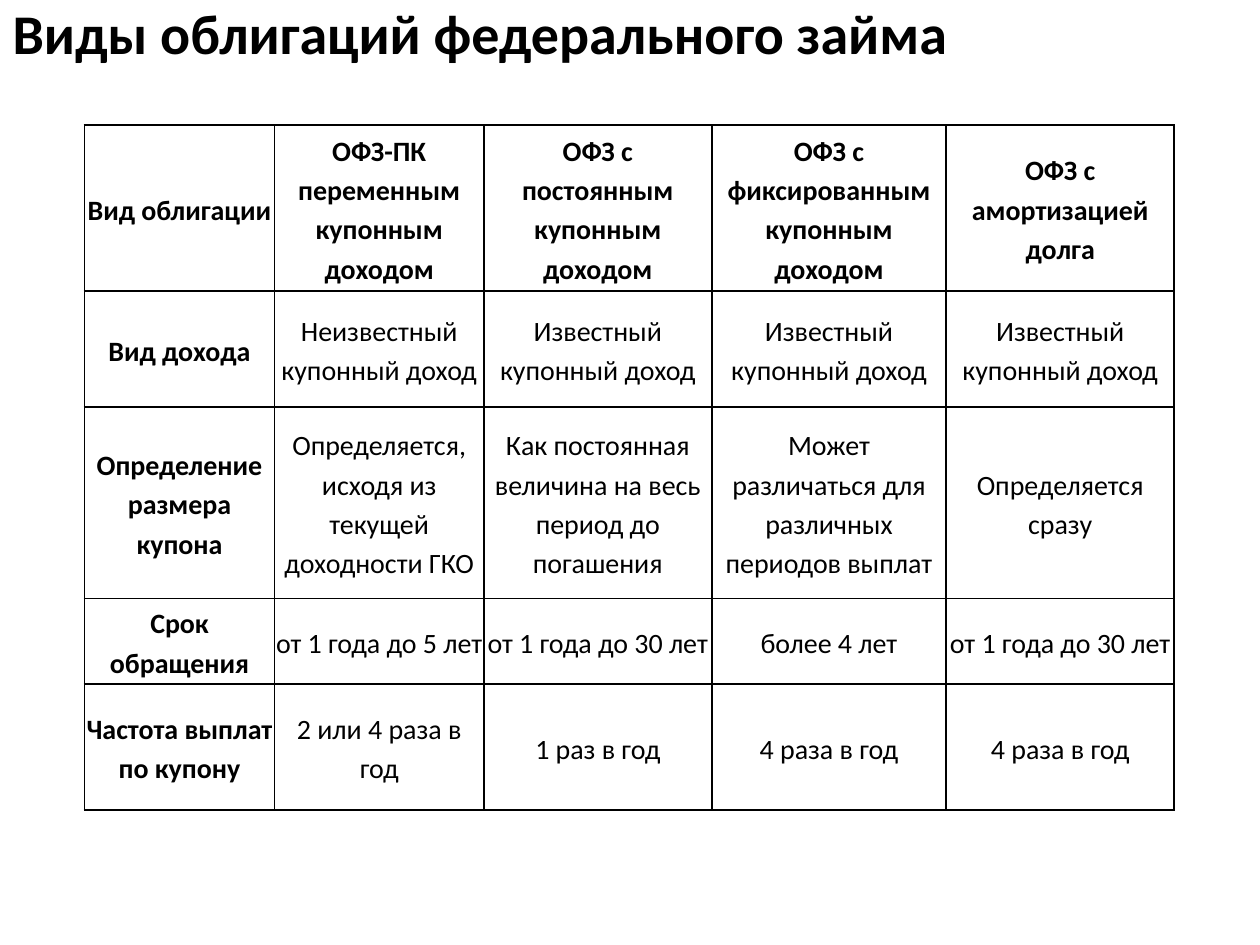
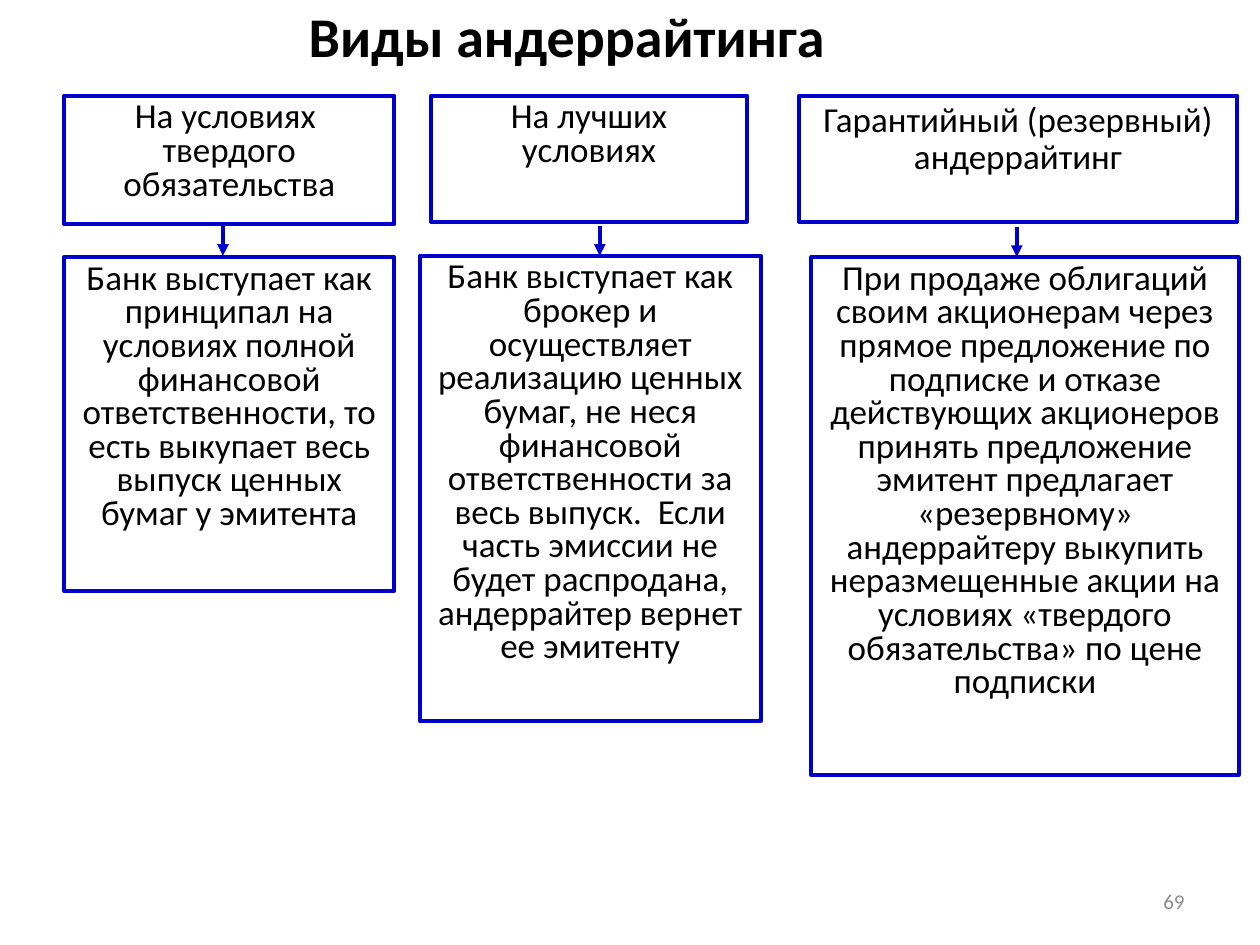
from lxml import etree
from pptx import Presentation
from pptx.dml.color import RGBColor
from pptx.enum.shapes import MSO_CONNECTOR as Connector, MSO_SHAPE as Shape
from pptx.enum.text import MSO_ANCHOR as Anchor, MSO_AUTO_SIZE as AutoSize, PP_ALIGN as Align
from pptx.oxml.ns import qn
from pptx.util import Inches, Pt

FONT = "Calibri"
BLACK, WHITE, BLUE, GREY = "000000", "FFFFFF", "0000CC", "8C8C8C"

BONDS_TITLE = "Виды облигаций федерального займа"
BOND_ROWS = [
    ["Вид облигации", "ОФЗ-ПК переменным купонным доходом", "ОФЗ с постоянным купонным доходом",
     "ОФЗ с фиксированным купонным доходом", "ОФЗ с амортизацией долга"],
    ["Вид дохода", "Неизвестный купонный доход", "Известный купонный доход",
     "Известный купонный доход", "Известный купонный доход"],
    ["Определение размера купона", "Определяется, исходя из текущей доходности ГКО",
     "Как постоянная величина на весь период до погашения",
     "Может различаться для различных периодов выплат", "Определяется сразу"],
    ["Срок обращения", "от 1 года до 5 лет", "от 1 года до 30 лет", "более 4 лет",
     "от 1 года до 30 лет"],
    ["Частота выплат по купону", "2 или 4 раза в год", "1 раз в год", "4 раза в год",
     "4 раза в год"],
]
COLUMN_WIDTHS = [1.51, 1.66, 1.81, 1.86, 1.81]
ROW_HEIGHTS = [1.32, 0.92, 1.52, 0.68, 1]

UNDERWRITING_TITLE = "Виды андеррайтинга"
PAGE_NUMBER = "69"
UNDERWRITING = [
    dict(kind="На условиях  твердого обязательства", kind_box=(0.51, 0.76, 2.62, 1.02),
         kind_spacing=0.8, arrow=(1.77, 1.79),
         terms="Банк выступает как принципал на условиях полной финансовой ответственности, "
               "то есть выкупает весь выпуск ценных бумаг у эмитента",
         terms_box=(0.51, 2.04, 2.62, 2.65)),
    dict(kind="На лучших условиях", kind_box=(3.42, 0.76, 2.51, 1),
         kind_spacing=0.8, arrow=(4.76, 1.79),
         terms="Банк выступает как брокер и осуществляет реализацию ценных бумаг, не неся "
               "финансовой ответственности за весь выпуск.  Если часть эмиссии не будет "
               "распродана, андеррайтер вернет ее эмитенту",
         terms_box=(3.33, 2.03, 2.71, 3.69)),
    dict(kind="Гарантийный (резервный) андеррайтинг", kind_box=(6.34, 0.76, 3.48, 1),
         kind_spacing=0.9, arrow=(8.07, 1.8),
         terms="При продаже облигаций своим акционерам через прямое предложение по подписке "
               "и отказе действующих акционеров принять предложение эмитент предлагает "
               "«резервному» андеррайтеру выкупить неразмещенные акции на условиях "
               "«твердого обязательства» по цене подписки",
         terms_box=(6.44, 2.04, 3.39, 4.11)),
]
ARROW_LENGTH = 0.24


def color(code):
    return RGBColor.from_string(code)


def write(frame, text, size=20, ink=BLACK, bold=False, align=Align.CENTER, spacing=1.0,
          before=0, after=0, anchor=Anchor.TOP):
    frame.word_wrap = True
    frame.vertical_anchor = anchor
    paragraph = frame.paragraphs[0]
    paragraph.alignment = align
    paragraph.line_spacing = spacing
    paragraph.space_before, paragraph.space_after = Pt(before), Pt(after)
    run = paragraph.add_run()
    run.text = text
    run.font.name, run.font.size, run.font.bold = FONT, Pt(size), bold
    run.font.color.rgb = color(ink)


def add_titled_slide(deck, text, box, align):
    slide = deck.slides.add_slide(deck.slide_layouts[5])
    title = slide.shapes.title
    title.left, title.top, title.width, title.height = map(Inches, box)
    title.text_frame.auto_size = AutoSize.NONE
    write(title.text_frame, text, size=32, bold=True, align=align, spacing=0.9, after=6)
    return slide


def add_borders(cell):
    properties = cell._tc.get_or_add_tcPr()
    for position, side in enumerate(("lnL", "lnR", "lnT", "lnB")):
        border = etree.Element(qn(f"a:{side}"), w=str(Pt(1)))
        fill = etree.SubElement(border, qn("a:solidFill"))
        etree.SubElement(fill, qn("a:srgbClr"), val=BLACK)
        properties.insert(position, border)


def add_bond_table(slide):
    table = slide.shapes.add_table(
        len(BOND_ROWS), len(COLUMN_WIDTHS), Inches(0.67), Inches(0.99),
        Inches(sum(COLUMN_WIDTHS)), Inches(sum(ROW_HEIGHTS))).table
    table.first_row = table.horz_banding = False
    for column, width in zip(table.columns, COLUMN_WIDTHS):
        column.width = Inches(width)
    for row, height in zip(table.rows, ROW_HEIGHTS):
        row.height = Inches(height)
    for r, texts in enumerate(BOND_ROWS):
        for c, text in enumerate(texts):
            cell = table.cell(r, c)
            cell.margin_left = cell.margin_right = Inches(0.01)
            cell.margin_top = cell.margin_bottom = Inches(0.01)
            cell.fill.solid()
            cell.fill.fore_color.rgb = color(WHITE)
            add_borders(cell)
            write(cell.text_frame, text, size=16, bold=r == 0 or c == 0,
                  spacing=1.15, before=6, after=6)
            cell.vertical_anchor = Anchor.MIDDLE


def style_line(line):
    line.color.rgb = color(BLUE)
    line.width = Pt(2.25)


def add_box(slide, text, box, spacing):
    frame = slide.shapes.add_shape(Shape.RECTANGLE, *map(Inches, box))
    frame.shadow.inherit = False
    frame.fill.background()
    style_line(frame.line)
    write(frame.text_frame, text, spacing=spacing)


def add_arrow(slide, x, y):
    arrow = slide.shapes.add_connector(Connector.STRAIGHT, Inches(x), Inches(y),
                                       Inches(x), Inches(y + ARROW_LENGTH))
    style_line(arrow.line)
    etree.SubElement(arrow.line._get_or_add_ln(), qn("a:tailEnd"), type="triangle")
    etree.SubElement(arrow._element.spPr, qn("a:effectLst"))


def main():
    deck = Presentation()
    deck.slide_width, deck.slide_height = Inches(10), Inches(7.5)

    bonds = add_titled_slide(deck, BONDS_TITLE, (0, 0, 9, 0.84), Align.LEFT)
    add_bond_table(bonds)

    underwriting = add_titled_slide(deck, UNDERWRITING_TITLE, (0, 0.02, 9, 0.5), Align.CENTER)
    for option in UNDERWRITING:
        add_box(underwriting, option["kind"], option["kind_box"], option["kind_spacing"])
        add_box(underwriting, option["terms"], option["terms_box"], 0.8)
        add_arrow(underwriting, *option["arrow"])
    page = underwriting.shapes.add_textbox(*map(Inches, (7.17, 6.95, 2.33, 0.4)))
    write(page.text_frame, PAGE_NUMBER, size=12, ink=GREY, align=Align.RIGHT,
          anchor=Anchor.MIDDLE)

    deck.save("out.pptx")


if __name__ == "__main__":
    main()
